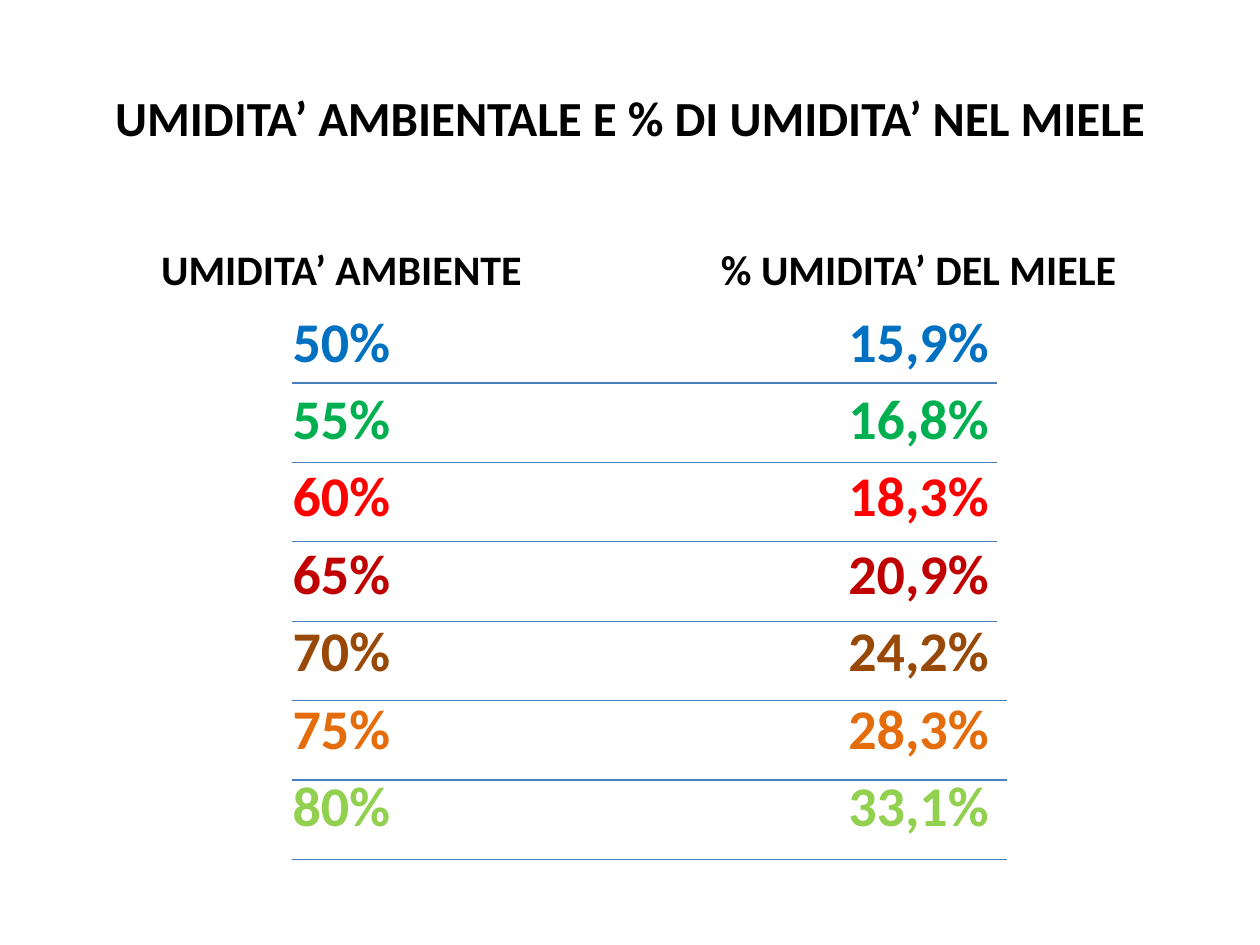
from dataclasses import dataclass

from lxml import etree
from pptx import Presentation
from pptx.dml.color import RGBColor
from pptx.enum.shapes import MSO_CONNECTOR
from pptx.enum.text import MSO_ANCHOR, PP_ALIGN
from pptx.oxml.ns import qn
from pptx.slide import Slide
from pptx.util import Inches, Pt

STRAIGHT = MSO_CONNECTOR.STRAIGHT
CENTER = PP_ALIGN.CENTER
TOP, MIDDLE, BOTTOM = MSO_ANCHOR.TOP, MSO_ANCHOR.MIDDLE, MSO_ANCHOR.BOTTOM


@dataclass(frozen=True)
class Theme:
    font: str = "Calibri"
    text: str = "000000"
    rule: str = "4B7EBC"
    title_size: float = 28
    heading_size: float = 24
    value_size: float = 32
    value_spacing: float = 5.8
    rule_width: float = 0.75


@dataclass(frozen=True)
class Box:
    left: float
    top: float
    width: float
    height: float


@dataclass(frozen=True)
class Reading:
    ambient: str
    honey: str
    color: str
    rule_end: float


@dataclass(frozen=True)
class Column:
    heading: str
    field: str
    left: float


THEME = Theme()
TITLE = "UMIDITA’ AMBIENTALE E % DI UMIDITA’ NEL MIELE"
COLUMNS = [
    Column("UMIDITA’ AMBIENTE", "ambient", 0.5),
    Column("% UMIDITA’ DEL MIELE", "honey", 5.08),
]
READINGS = [
    Reading("50%", "15,9%", "0070C0", 7.91),
    Reading("55%", "16,8%", "00B050", 7.91),
    Reading("60%", "18,3%", "FF0000", 7.91),
    Reading("65%", "20,9%", "C00000", 7.91),
    Reading("70%", "24,2%", "984807", 7.99),
    Reading("75%", "28,3%", "E46C0A", 7.99),
    Reading("80%", "33,1%", "92D050", 7.99),
]
COLUMN_WIDTH = 4.42
RULE_LEFT, RULE_TOP, RULE_STEP = 2.32, 3.04, 0.63


def add_text(slide: Slide, box: Box, lines: list[tuple[str, str]], size: float,
             anchor: MSO_ANCHOR) -> None:
    shape = slide.shapes.add_textbox(
        Inches(box.left), Inches(box.top), Inches(box.width), Inches(box.height))
    frame = shape.text_frame
    frame.word_wrap = True
    frame.vertical_anchor = anchor
    for index, (text, color) in enumerate(lines):
        paragraph = frame.add_paragraph() if index else frame.paragraphs[0]
        paragraph.alignment = CENTER
        if index:
            paragraph.space_before = Pt(THEME.value_spacing)
        run = paragraph.add_run()
        run.text = text
        font_format = {"name": THEME.font, "size": Pt(size), "bold": True}
        for name, value in font_format.items():
            setattr(run.font, name, value)
        run.font.color.rgb = RGBColor.from_string(color)


def add_column(slide: Slide, column: Column) -> None:
    add_text(slide, Box(column.left, 1.68, COLUMN_WIDTH, 0.7),
             [(column.heading, THEME.text)], THEME.heading_size, BOTTOM)
    values = [(getattr(reading, column.field), reading.color) for reading in READINGS]
    add_text(slide, Box(column.left, 2.38, COLUMN_WIDTH, 4.32),
             values, THEME.value_size, TOP)


def add_rule(slide: Slide, top: float, end: float) -> None:
    rule = slide.shapes.add_connector(
        STRAIGHT, Inches(RULE_LEFT), Inches(top), Inches(end), Inches(top))
    rule.line.color.rgb = RGBColor.from_string(THEME.rule)
    rule.line.width = Pt(THEME.rule_width)
    etree.SubElement(rule._element.spPr, qn("a:effectLst"))


def main() -> None:
    presentation = Presentation()
    presentation.slide_width = Inches(10)
    presentation.slide_height = Inches(7.5)
    slide = presentation.slides.add_slide(presentation.slide_layouts[6])
    add_text(slide, Box(0.5, 0.3, 9, 1.25), [(TITLE, THEME.text)],
             THEME.title_size, MIDDLE)
    for column in COLUMNS:
        add_column(slide, column)
    for index, reading in enumerate(READINGS):
        add_rule(slide, RULE_TOP + index * RULE_STEP, reading.rule_end)
    presentation.save("out.pptx")


if __name__ == "__main__":
    main()
